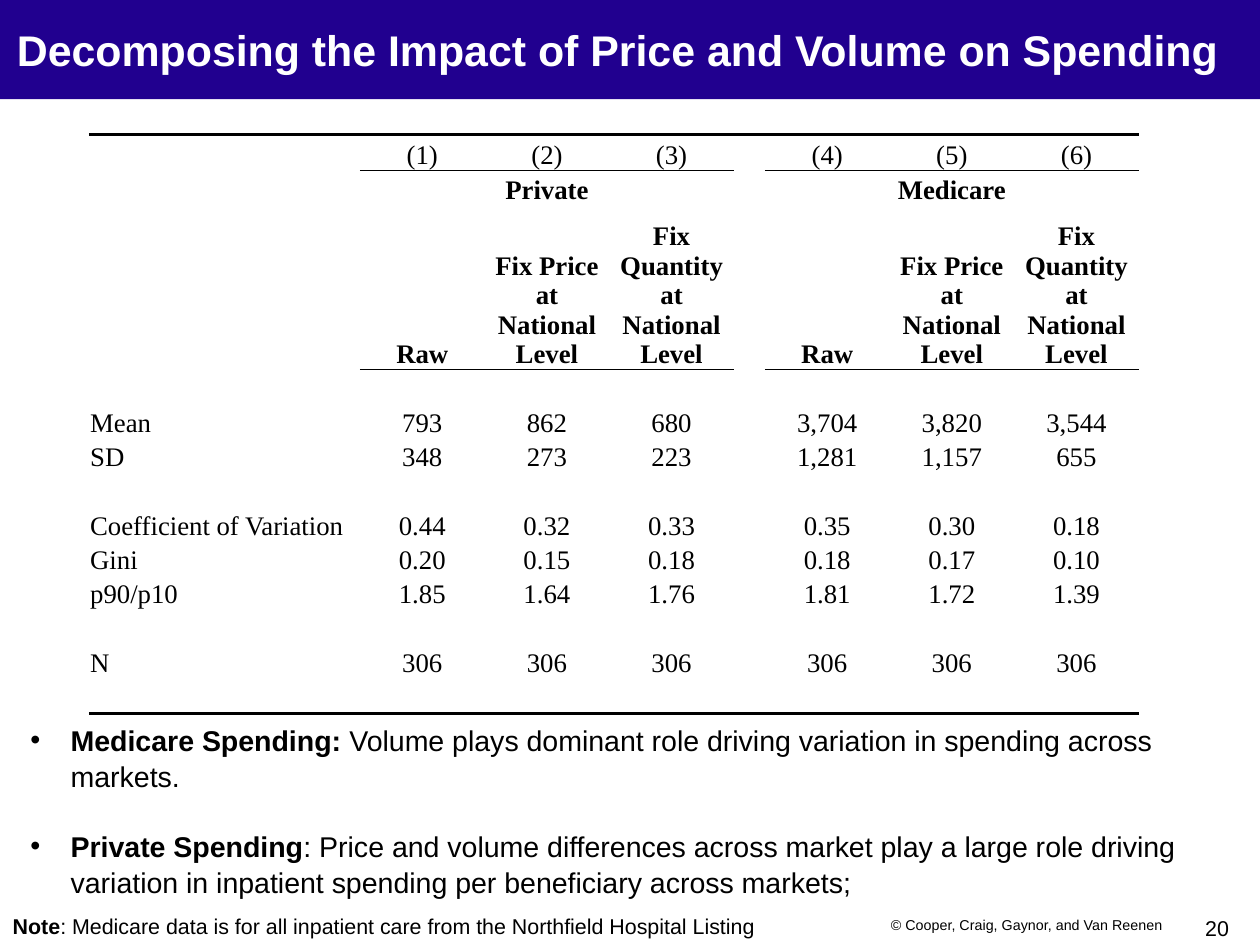
from dataclasses import dataclass

from lxml import etree
from pptx import Presentation
from pptx.dml.color import RGBColor
from pptx.enum.shapes import MSO_SHAPE
from pptx.enum.text import MSO_ANCHOR, PP_ALIGN
from pptx.oxml.ns import qn
from pptx.util import Pt

LEFT, CENTER, RIGHT = PP_ALIGN.LEFT, PP_ALIGN.CENTER, PP_ALIGN.RIGHT
TOP, MIDDLE, BOTTOM = MSO_ANCHOR.TOP, MSO_ANCHOR.MIDDLE, MSO_ANCHOR.BOTTOM
RECTANGLE = MSO_SHAPE.RECTANGLE
TITLE_ONLY = 5


@dataclass(frozen=True)
class Theme:
    band: str = "21008F"
    ink: str = "000000"
    paper: str = "FFFFFF"
    sans: str = "Arial"
    serif: str = "Times New Roman"
    title: float = 24
    body: float = 16
    table: float = 15
    note: float = 12
    credit: float = 8
    thick: float = 2
    thin: float = 0.5


THEME = Theme()
SLIDE_WIDTH, SLIDE_HEIGHT = 705.6, 529.2

TITLE = "Decomposing the Impact of Price and Volume on Spending"
SCENARIOS = ["Raw", "Fix Price at National Level", "Fix Quantity at National Level"]
# Each row: label, three private values, a gap, three Medicare values
TABLE_ROWS = [
    [],
    ["", "(1)", "(2)", "(3)", "", "(4)", "(5)", "(6)"],
    ["", "Private", "", "", "", "Medicare", "", ""],
    ["", *SCENARIOS, "", *SCENARIOS],
    [],
    ["Mean", "793", "862", "680", "", "3,704", "3,820", "3,544"],
    ["SD", "348", "273", "223", "", "1,281", "1,157", "655"],
    ["Coefficient of Variation", "0.44", "0.32", "0.33", "", "0.35", "0.30", "0.18"],
    ["Gini", "0.20", "0.15", "0.18", "", "0.18", "0.17", "0.10"],
    ["p90/p10", "1.85", "1.64", "1.76", "", "1.81", "1.72", "1.39"],
    [],
    ["N", *["306"] * 3, "", *["306"] * 3],
    [],
]
COLUMN_WIDTHS = [151.8] + [69.8] * 3 + [17.4] + [69.8] * 3
ROW_HEIGHTS = [20, 20, 19.6, 92] + [19.2] * 3 + [38.4] + [19.2] * 4 + [20]
HEADING_ROWS = (2, 3)
GROUP_STARTS = (1, 5)
DATA_COLUMNS = (1, 2, 3, 5, 6, 7)
ALL_COLUMNS = range(8)
# Row boundary: ruled columns and line width
RULES = {
    1: (ALL_COLUMNS, THEME.thick),
    2: (DATA_COLUMNS, THEME.thin),
    4: (DATA_COLUMNS, THEME.thin),
    13: (ALL_COLUMNS, THEME.thick),
}
FINDINGS = [
    [("Medicare Spending: ", True),
     ("Volume plays dominant role driving variation in spending across markets.", False)],
    [("Private Spending", True),
     (": Price and volume differences across market play a large role driving "
      "variation in inpatient spending per beneficiary across markets;", False)],
]
NOTE = [("Note", True),
        (": Medicare data is for all inpatient care from the Northfield Hospital Listing", False)]
CREDIT = "© Cooper, Craig, Gaynor, and Van Reenen"
PAGE = "20"


def write(frame, paragraphs, *, size, font=THEME.sans, color=THEME.ink, bold=False,
          align=LEFT, anchor=TOP, insets=(0, 0, 0, 0), wrap=True,
          bullet_indent=0, line_spacing=1.0, gap=0):
    """Fill a frame; a paragraph is a string or a list of (text, bold) runs."""
    frame.word_wrap = wrap
    frame.vertical_anchor = anchor
    (frame.margin_left, frame.margin_top,
     frame.margin_right, frame.margin_bottom) = map(Pt, insets)
    for i, runs in enumerate(paragraphs):
        paragraph = frame.add_paragraph() if i else frame.paragraphs[0]
        paragraph.alignment = align
        paragraph.line_spacing = line_spacing
        paragraph.space_before = Pt(gap if i else 0)
        if bullet_indent:
            properties = paragraph._p.get_or_add_pPr()
            properties.set("marL", str(Pt(bullet_indent)))
            properties.set("indent", str(-Pt(bullet_indent)))
            etree.SubElement(properties, qn("a:buFont"), typeface=font)
            etree.SubElement(properties, qn("a:buChar"), char="•")
        for text, strong in [(runs, bold)] if isinstance(runs, str) else runs:
            run = paragraph.add_run()
            run.text = text
            run.font.name, run.font.size, run.font.bold = font, Pt(size), strong
            run.font.color.rgb = RGBColor.from_string(color)


def add_text(slide, box, paragraphs, **style):
    write(slide.shapes.add_textbox(*map(Pt, box)).text_frame, paragraphs, **style)


def rule_cell(cell, row, column):
    """Draw the rules above and below a cell, and no other border."""
    properties = cell._tc.get_or_add_tcPr()
    for side, boundary in (("lnL", None), ("lnR", None), ("lnT", row), ("lnB", row + 1)):
        columns, width = RULES.get(boundary, ((), 0))
        line = etree.SubElement(properties, qn(f"a:{side}"), w=str(Pt(width)))
        if column in columns:
            fill = etree.SubElement(line, qn("a:solidFill"))
            etree.SubElement(fill, qn("a:srgbClr"), val=THEME.ink)
        else:
            etree.SubElement(line, qn("a:noFill"))
    cell.fill.background()


def add_heading(slide, box):
    left, top, width, height = box
    band = slide.shapes.add_shape(RECTANGLE, *map(Pt, box))
    band.shadow.inherit = False
    band.fill.solid()
    band.fill.fore_color.rgb = RGBColor.from_string(THEME.band)
    band.line.fill.background()
    title = slide.shapes.title
    band._element.addnext(title._element)  # title in front of the band
    title.left, title.top = Pt(left + 9.4), Pt(top + 13)
    title.width, title.height = Pt(width - 17), Pt(height - 26.6)
    write(title.text_frame, [TITLE], size=THEME.title, color=THEME.paper,
          bold=True, anchor=MIDDLE)


def add_spending_table(slide, box):
    table = slide.shapes.add_table(len(ROW_HEIGHTS), len(COLUMN_WIDTHS),
                                   *map(Pt, box)).table
    table.first_row = table.horz_banding = False
    for column, width in zip(table.columns, COLUMN_WIDTHS):
        column.width = Pt(width)
    for row, height in zip(table.rows, ROW_HEIGHTS):
        row.height = Pt(height)
    for start in GROUP_STARTS:
        table.cell(2, start).merge(table.cell(2, start + 2))
    for r, labels in enumerate(TABLE_ROWS):
        for c in ALL_COLUMNS:
            cell = table.cell(r, c)
            rule_cell(cell, r, c)
            text = labels[c] if labels else ""
            write(cell.text_frame, [text] if text else [[]], size=THEME.table,
                  font=THEME.serif, bold=r in HEADING_ROWS,
                  align=CENTER if c else LEFT)
            cell.vertical_anchor = BOTTOM
            cell.margin_left = cell.margin_right = cell.margin_top = Pt(0.7)
            cell.margin_bottom = 0
            if not text:  # keeps empty rows at their set height
                etree.SubElement(cell.text_frame.paragraphs[0]._p, qn("a:endParaRPr"),
                                 sz=str(THEME.table * 100))


def add_findings(slide, box):
    add_text(slide, box, FINDINGS, size=THEME.body, insets=(7.2, 3.6, 7.2, 3.6),
             bullet_indent=22.5, line_spacing=1.05, gap=19.2)


def add_footer(slide, box):
    left, top, width, height = box
    insets = (7.2, 3.6, 7.2, 3.6)
    add_text(slide, (left, top, 447, height), [NOTE], size=THEME.note, insets=insets)
    add_text(slide, (left + 491.8, top + 2.2, 167.8, 17.3), [CREDIT],
             size=THEME.credit, insets=insets, wrap=False)
    add_text(slide, (left + width - 31, top + 5, 13.7, 14.4), [PAGE],
             size=THEME.note, align=RIGHT, wrap=False)


def main():
    presentation = Presentation()
    presentation.slide_width, presentation.slide_height = Pt(SLIDE_WIDTH), Pt(SLIDE_HEIGHT)
    slide = presentation.slides.add_slide(presentation.slide_layouts[TITLE_ONLY])
    add_heading(slide, (0, 0, SLIDE_WIDTH, 55.6))
    add_findings(slide, (10, 400.3, 665.3, 107))
    add_footer(slide, (0, 507.6, SLIDE_WIDTH, 21.6))
    add_spending_table(slide, (49.8, 55.4, sum(COLUMN_WIDTHS), sum(ROW_HEIGHTS)))
    presentation.save("out.pptx")


if __name__ == "__main__":
    main()
